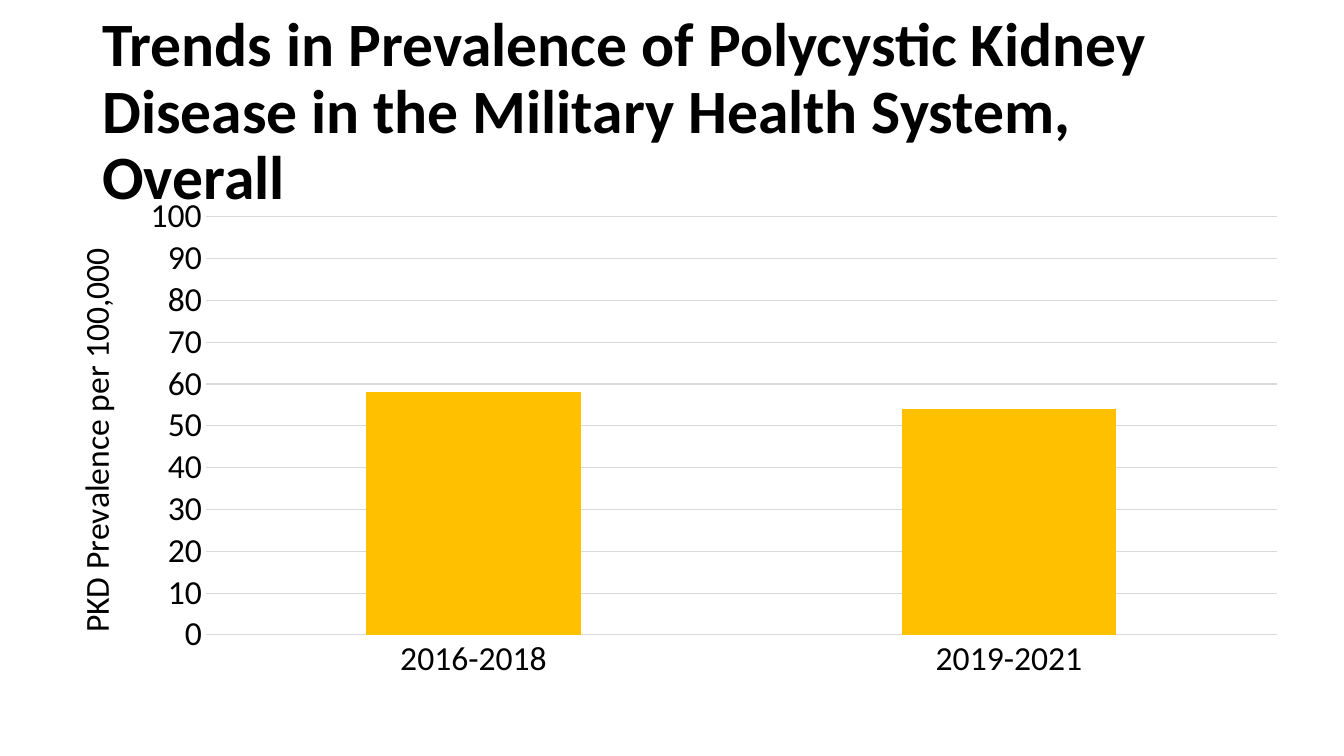
from lxml.etree import SubElement
from pptx import Presentation
from pptx.chart.data import CategoryChartData
from pptx.dml.color import RGBColor
from pptx.enum.chart import XL_CHART_TYPE, XL_TICK_MARK
from pptx.enum.text import MSO_ANCHOR
from pptx.oxml import parse_xml
from pptx.oxml.ns import nsdecls, qn
from pptx.util import Inches, Pt

BLACK = RGBColor(0x00, 0x00, 0x00)
GREY = RGBColor(0xD9, 0xD9, 0xD9)
GOLD = RGBColor(0xFF, 0xC0, 0x00)
COLS, ROWS = 160, 90


def pin(node, inner=False, **spots):
    """Fix a chart part at x, y, w, h, given as shares of the chart."""
    hold = node.find(qn("c:layout"))
    if hold is None:
        hold = parse_xml(f"<c:layout {nsdecls('c')}/>")
        node.insert(0, hold)
    area = SubElement(hold, qn("c:manualLayout"))
    if inner:
        SubElement(area, qn("c:layoutTarget")).set("val", "inner")
    for key in "xy":
        SubElement(area, qn(f"c:{key}Mode")).set("val", "edge")
    for key, share in spots.items():
        SubElement(area, qn(f"c:{key}")).set("val", str(share))


class Deck:
    face = "Calibri"

    def __init__(self):
        self.file = Presentation()
        self.file.slide_width = Inches(13.33)
        self.file.slide_height = Inches(7.5)
        self.slide = self.file.slides.add_slide(self.file.slide_layouts[6])

    def place(self, col, row, wide, high):
        x = self.file.slide_width / COLS
        y = self.file.slide_height / ROWS
        return [round(n) for n in (col * x, row * y, wide * x, high * y)]

    def style(self, font, size, bold=False):
        font.name, font.size, font.bold = self.face, Pt(size), bold
        font.color.rgb = BLACK

    def rule(self, line):
        line.color.rgb = GREY
        line.width = Pt(0.75)

    def title(self, text, *cells):
        frame = self.slide.shapes.add_textbox(*self.place(*cells)).text_frame
        frame.word_wrap = True
        frame.vertical_anchor = MSO_ANCHOR.MIDDLE
        para = frame.paragraphs[0]
        para.line_spacing = 0.9
        run = para.add_run()
        run.text = text
        self.style(run.font, 44, True)

    def bars(self, label, values, *cells):
        data = CategoryChartData()
        data.categories = list(values)
        data.add_series("Prevalence", list(values.values()))
        chart = self.slide.shapes.add_chart(
            XL_CHART_TYPE.COLUMN_CLUSTERED, *self.place(*cells), data).chart
        chart.has_title = chart.has_legend = False
        self.style(chart.font, 24)

        plot = chart.plots[0]
        plot.gap_width = 150
        plot.vary_by_categories = False
        fill = plot.series[0].format.fill
        fill.solid()
        fill.fore_color.rgb = GOLD

        base, scale = chart.category_axis, chart.value_axis
        for axis in (base, scale):
            axis.major_tick_mark = axis.minor_tick_mark = XL_TICK_MARK.NONE
            self.style(axis.tick_labels.font, 24)
        self.rule(base.format.line)
        scale.format.line.fill.background()
        scale.minimum_scale, scale.maximum_scale = 0, 100
        scale.major_unit = 10
        self.rule(scale.major_gridlines.format.line)

        name = scale.axis_title
        run = name.text_frame.paragraphs[0].add_run()
        run.text = label
        self.style(run.font, 24)
        body = name._element.find(".//" + qn("a:bodyPr"))
        body.set("rot", "-5400000")
        body.set("vert", "horz")
        pin(name._element, x=0.02, y=0.11)
        area = chart._chartSpace.find(".//" + qn("c:plotArea"))
        pin(area, inner=True, x=0.13, y=0.06, w=0.85, h=0.83)


def main():
    deck = Deck()
    deck.title("Trends in Prevalence of Polycystic Kidney Disease "
               "in the Military Health System, Overall", 11, 4.8, 138, 17.4)
    deck.bars("PKD Prevalence per 100,000",
              {"2016-2018": 58, "2019-2021": 54}, 5, 22.2, 150, 60)
    deck.file.save("out.pptx")


if __name__ == "__main__":
    main()
